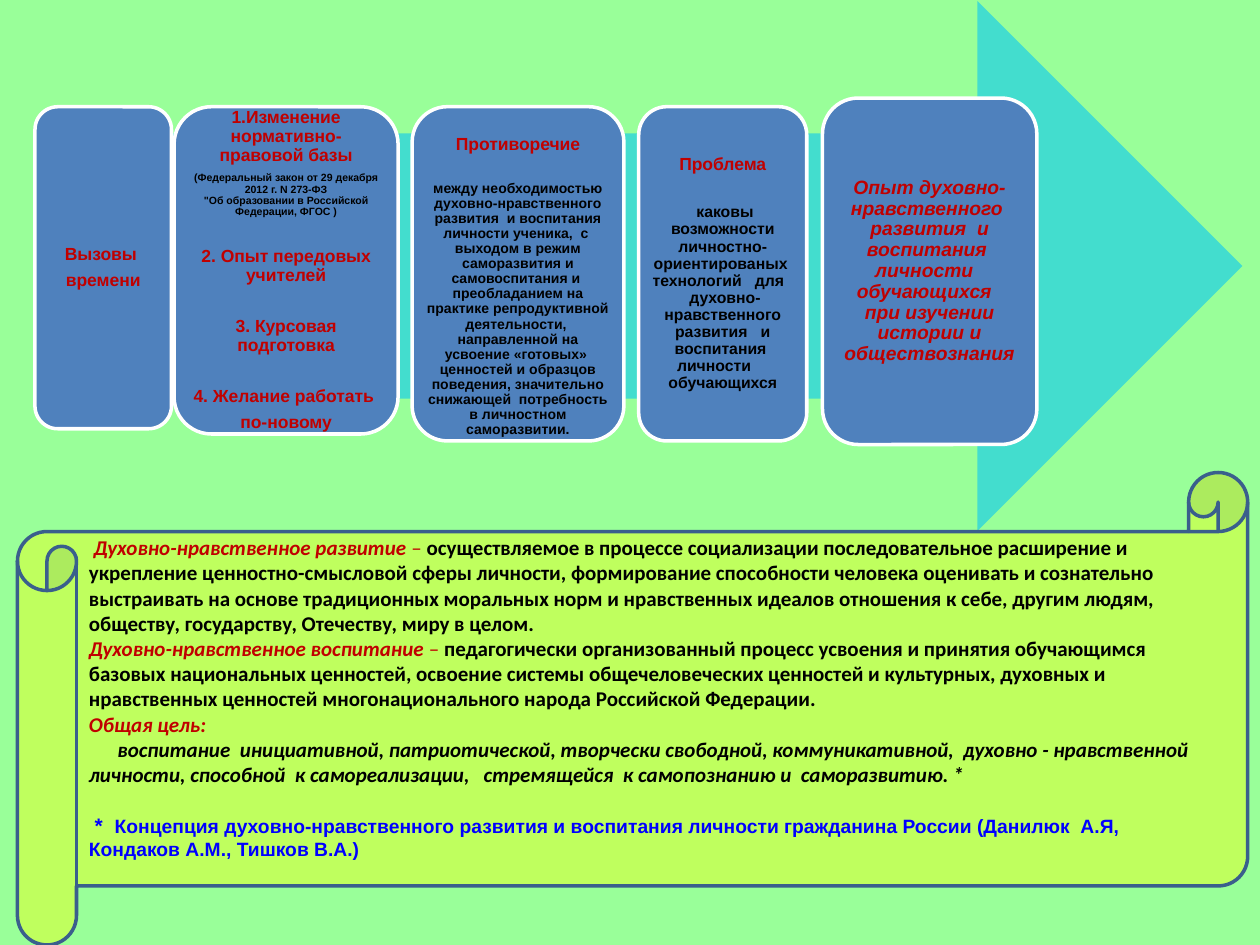
from dataclasses import dataclass

from lxml.etree import SubElement
from pptx import Presentation
from pptx.dml.color import RGBColor
from pptx.enum.shapes import MSO_SHAPE
from pptx.enum.text import MSO_ANCHOR, PP_ALIGN
from pptx.oxml.ns import qn
from pptx.util import Pt

MINT = RGBColor(0x99, 0xFF, 0x99)
TEAL = RGBColor(0x43, 0xDD, 0xCE)
BLUE = RGBColor(0x4F, 0x81, 0xBD)
NAVY = RGBColor(0x3A, 0x5F, 0x8C)
LINK = RGBColor(0x00, 0x00, 0xFF)
RED = RGBColor(0xC0, 0x00, 0x00)
YELLOW = RGBColor(0xFF, 0xFF, 0x00)
WHITE = RGBColor(0xFF, 0xFF, 0xFF)
BLACK = RGBColor(0x00, 0x00, 0x00)


@dataclass
class Span:
    text: str
    size: float = 10
    color: RGBColor = RED
    bold: bool = True
    italic: bool = False
    name: str = "Arial"


@dataclass
class Para:
    spans: list[Span]
    before: float = 0


@dataclass
class Card:
    left: float
    top: float
    width: float
    height: float
    paras: list[Para]
    inset: float = 2.7
    lead: float = 0  # extra inset above the text


def line(text: str, before: float = 0, **style) -> Para:
    return Para([Span(text, **style)], before)


def add_span(para, span: Span) -> None:
    for i, part in enumerate(span.text.split("\n")):
        if i:
            para.add_line_break()
        run = para.add_run()
        run.text = part
        look = {"size": Pt(span.size), "bold": span.bold,
                "italic": span.italic, "name": span.name}
        for key, value in look.items():
            setattr(run.font, key, value)
        run.font.color.rgb = span.color


def fill_text(shape, paras: list[Para], frame: dict, form: dict,
              after: float = 0) -> None:
    """Write the paragraphs; after is a share of the text size."""
    body = shape.text_frame
    for key, value in frame.items():
        setattr(body, key, value)
    for i, item in enumerate(paras):
        para = body.add_paragraph() if i else body.paragraphs[0]
        gaps = {"space_before": Pt(item.before),
                "space_after": Pt(after * item.spans[0].size)}
        for key, value in (form | gaps).items():
            setattr(para, key, value)
        for span in item.spans:
            add_span(para, span)


def add_form(slide, kind, box: tuple, fill: RGBColor, edge: RGBColor | None):
    shape = slide.shapes.add_shape(kind, *map(Pt, box))
    shape.shadow.inherit = False
    shape.fill.solid()
    shape.fill.fore_color.rgb = fill
    if edge is None:
        shape.line.fill.background()
    else:
        shape.line.color.rgb = edge
        shape.line.width = Pt(2)
    return shape


def add_card(slide, card: Card) -> None:
    box = (card.left, card.top, card.width, card.height)
    shape = add_form(slide, MSO_SHAPE.ROUNDED_RECTANGLE, box, BLUE, WHITE)
    pad = Pt(card.inset)
    frame = {"word_wrap": True, "vertical_anchor": MSO_ANCHOR.MIDDLE,
             "margin_left": pad, "margin_right": pad, "margin_bottom": pad,
             "margin_top": Pt(card.inset + card.lead)}
    form = {"alignment": PP_ALIGN.CENTER, "line_spacing": 0.9}
    fill_text(shape, card.paras, frame, form, after=0.4)


def term(text: str, rest: str) -> Para:
    """A red term, a dash and its definition."""
    style = {"size": 12, "name": "Calibri"}
    return Para([Span(text, italic=True, **style),
                 Span(" – ", bold=False, **style),
                 Span(rest, color=BLACK, **style)])


CARDS = [
    Card(20, 61, 78, 184, [line("Вызовы "), line("времени")]),
    Card(99.5, 61, 128, 187, [
        line("1.Изменение нормативно-правовой базы"),
        line("(Федеральный закон от 29 декабря 2012 г. N 273-ФЗ\n"
             "\"Об образовании в Российской Федерации, ФГОС )",
             size=6, color=BLACK),
        line("2. Опыт передовых учителей", 14.3),
        line("3. Курсовая подготовка", 14.3),
        line("4. Желание работать ", 14.3),
        line("по-новому"),
    ]),
    Card(235.5, 61, 121, 191, [
        line("Противоречие"),
        line("между необходимостью духовно-нравственного развития  и "
             "воспитания личности ученика,  с  выходом в режим саморазвития "
             "и самовоспитания и  преобладанием на практике репродуктивной "
             "деятельности,  направленной на усвоение «готовых»  ценностей и "
             "образцов поведения, значительно снижающей  потребность в "
             "личностном саморазвитии.", 11.5, size=8, color=BLACK),
    ], inset=1.4, lead=14.4),
    Card(365, 61, 96, 191, [
        line("Проблема"),
        line(" каковы возможности личностно- ориентированых  технологий   "
             "для    духовно-нравственного развития   и воспитания  личности "
             "    обучающихся", 12.9, size=9, color=BLACK),
    ]),
    Card(470, 56, 122.5, 198, [
        line("Опыт духовно-нравственного  развития  и воспитания  личности   "
             "обучающихся   при изучении истории и обществознания",
             size=11, italic=True),
    ], inset=3.5),
]

TERMS = [
    term(" Духовно-нравственное развитие",
         "осуществляемое в процессе социализации последовательное расширение "
         "и укрепление ценностно-смысловой сферы личности, формирование "
         "способности человека оценивать и сознательно выстраивать на основе "
         "традиционных моральных норм и нравственных идеалов отношения к "
         "себе, другим людям, обществу, государству, Отечеству, миру в целом."),
    term("Духовно-нравственное воспитание",
         "педагогически организованный процесс усвоения и принятия "
         "обучающимся базовых национальных ценностей, освоение системы "
         "общечеловеческих ценностей и культурных, духовных и нравственных "
         "ценностей многонационального народа Российской Федерации."),
    line("Общая цель:", size=12, italic=True, name="Calibri"),
    line("воспитание  инициативной, патриотической, творчески свободной, "
         "коммуникативной,  духовно - нравственной  личности, способной  к "
         "самореализации,   стремящейся  к самопознанию и  саморазвитию. *",
         size=12, color=BLACK, italic=True, name="Calibri"),
    Para([Span(" *  ", 12, LINK),
          Span("Концепция духовно-нравственного развития и воспитания личности "
               "гражданина России (Данилюк\u00a0\u00a0А.Я, Кондаков А.М., "
               "Тишков В.А.)".replace("\u00a0", " "), 11, LINK)], 14.6),
]


def add_scroll(slide) -> None:
    shape = add_form(slide, MSO_SHAPE.HORIZONTAL_SCROLL,
                     (10, 270, 703, 270), YELLOW, NAVY)
    tint = shape.fill._xPr.find(qn("a:solidFill"))[0]
    SubElement(tint, qn("a:alpha"), val="38000")
    frame = {"word_wrap": True, "vertical_anchor": MSO_ANCHOR.MIDDLE,
             "margin_bottom": Pt(16.3)}
    fill_text(shape, TERMS, frame, {"alignment": PP_ALIGN.LEFT})
    # First-line indent of the goal
    goal = shape.text_frame.paragraphs[3]._p.get_or_add_pPr()
    goal.set("indent", str(Pt(16.3)))


def main() -> None:
    deck = Presentation()
    deck.slide_width, deck.slide_height = Pt(720), Pt(540)
    slide = deck.slides.add_slide(deck.slide_layouts[6])
    slide.background.fill.solid()
    slide.background.fill.fore_color.rgb = MINT

    # Arrow with the steps on it
    add_form(slide, MSO_SHAPE.RIGHT_ARROW, (20, 0.5, 690, 303), TEAL, None)
    for card in CARDS:
        add_card(slide, card)

    # Definitions and goal
    add_scroll(slide)
    deck.save("out.pptx")


if __name__ == "__main__":
    main()
